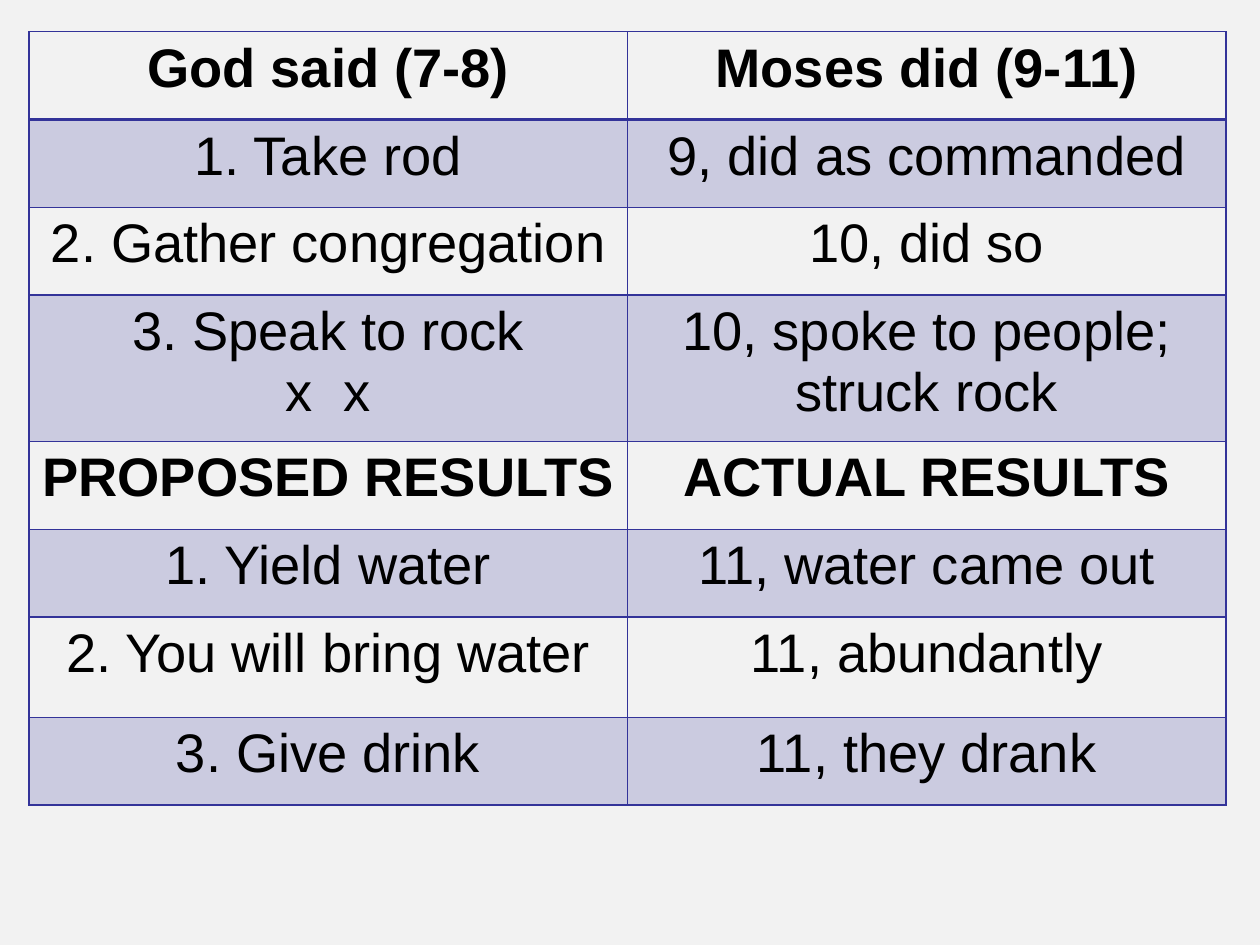
from lxml.etree import SubElement
from pptx import Presentation
from pptx.dml.color import RGBColor
from pptx.enum.text import PP_ALIGN
from pptx.oxml.ns import qn
from pptx.util import Cm, Pt

INDIGO = "333399"
LINE_HEIGHT, TWO_LINES, TALL = 1.77, 2.95, 2.02


def color(hex_value):
    return RGBColor.from_string(hex_value)


def add_border(cell, side, points):
    """Draw one edge (L, R, T or B); must come before the cell's fill."""
    line = SubElement(cell._tc.get_or_add_tcPr(), qn(f"a:ln{side}"), w=str(Pt(points)))
    solid = SubElement(line, qn("a:solidFill"))
    SubElement(solid, qn("a:srgbClr"), val=INDIGO)


# God's instructions beside what Moses did: left text, right text, height in cm
comparison = [
    ("God said (7-8)", "Moses did (9-11)", LINE_HEIGHT),
    ("1. Take rod", "9, did as commanded", LINE_HEIGHT),
    ("2. Gather congregation", "10, did so", LINE_HEIGHT),
    ("3. Speak to rock\vx  x", "10, spoke to people; struck rock", TWO_LINES),
    ("PROPOSED RESULTS", "ACTUAL RESULTS", LINE_HEIGHT),
    ("1. Yield water", "11, water came out", LINE_HEIGHT),
    ("2. You will bring water", "11, abundantly", TALL),
    ("3. Give drink", "11, they drank", LINE_HEIGHT),
]
heading_rows = (0, 4)
text_format = {"name": "Arial", "size": Pt(31)}

prs = Presentation()
prs.slide_width, prs.slide_height = Cm(25.4), Cm(19.05)
slide = prs.slides.add_slide(prs.slide_layouts[6])
slide.background.fill.solid()
slide.background.fill.fore_color.rgb = color("F2F2F2")

total_height = sum(height for _, _, height in comparison)
table = slide.shapes.add_table(
    len(comparison), 2, Cm(0.58), Cm(0.64), Cm(24.13), Cm(total_height)
).table
table.first_row = table.horz_banding = False
for column in table.columns:
    column.width = Cm(12.065)

for row, (said, did, height) in enumerate(comparison):
    table.rows[row].height = Cm(height)
    edges = {
        "L": 1,
        "R": 1,
        "T": 2 if row == 1 else 1,
        "B": 2 if row == 0 else 1,
    }
    for col, wording in enumerate((said, did)):
        cell = table.cell(row, col)
        for side, points in edges.items():
            add_border(cell, side, points)

        if row % 2:
            cell.fill.solid()
            cell.fill.fore_color.rgb = color(INDIGO)
            tint = cell._tc.tcPr.find(qn("a:solidFill")).find(qn("a:srgbClr"))
            SubElement(tint, qn("a:alpha"), val="20000")
        else:
            cell.fill.background()

        paragraph = cell.text_frame.paragraphs[0]
        paragraph.text = wording
        paragraph.alignment = PP_ALIGN.CENTER
        for run in paragraph.runs:
            for attribute, value in text_format.items():
                setattr(run.font, attribute, value)
            run.font.bold = row in heading_rows
            run.font.color.rgb = color("000000")

prs.save("out.pptx")
